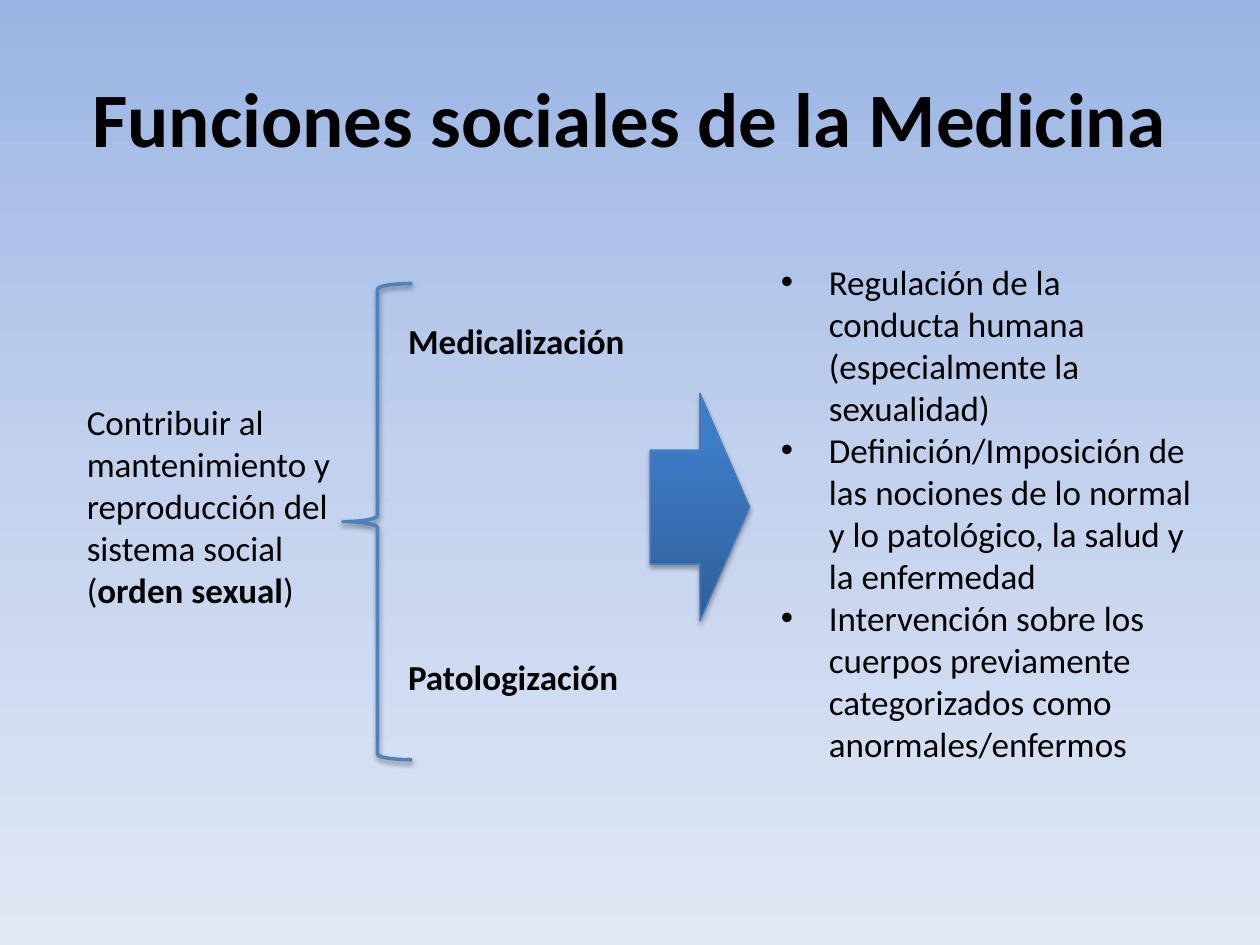
from lxml import etree
from pptx import Presentation
from pptx.dml.color import RGBColor
from pptx.enum import shapes, text
from pptx.oxml import ns
from pptx.util import Inches, Pt

rgb = RGBColor.from_string


def write(p, content, size=20, bold=False, color="000000"):
    r = p.add_run()
    r.text = content
    r.font.name = "Calibri"
    r.font.size = Pt(size)
    r.font.bold = bold
    r.font.color.rgb = rgb(color)


def gradient(fill, parent, stops, angle):
    fill.gradient()
    fill.gradient_angle = angle
    stop_list = parent.find(".//" + ns.qn("a:gsLst"))
    for old in list(stop_list):
        stop_list.remove(old)
    for position, color in stops:
        gs = etree.SubElement(stop_list, ns.qn("a:gs"), pos=str(position * 1000))
        etree.SubElement(gs, ns.qn("a:srgbClr"), val=color)


prs = Presentation()
prs.slide_width, prs.slide_height = Inches(10), Inches(7.5)
s = prs.slides.add_slide(prs.slide_layouts[5])

# Background
gradient(s.background.fill, s.element,
         [(0, "9AB5E4"), (50, "C2D1ED"), (100, "E1E8F5")], 270)

# Title
title = s.shapes.title
title.left, title.top = Inches(0.5), Inches(0.3)
title.width, title.height = Inches(9), Inches(1.25)
title.text_frame.vertical_anchor = text.MSO_ANCHOR.MIDDLE
p = title.text_frame.paragraphs[0]
p.alignment = text.PP_ALIGN.CENTER
write(p, "Funciones sociales de la Medicina", size=44, bold=True)

# Text columns
boxes = [
    (0.59, 3.13, 2.28, 2.12),
    (3.14, 2.49, 1.94, 3.13),
    (6.1, 2.02, 3.46, 4.14),
]
frames = []
for box in boxes:
    tf = s.shapes.add_textbox(*map(Inches, box)).text_frame
    tf.word_wrap = True
    frames.append(tf)
purpose, processes, effects = frames

# Purpose
p = purpose.paragraphs[0]
write(p, "Contribuir al mantenimiento y reproducción del sistema social (")
write(p, "orden sexual", bold=True)
write(p, ")")

# Processes
processes.word_wrap = False
write(processes.paragraphs[0], "Medicalización", bold=True)
p = processes.add_paragraph()
p.space_before = Pt(168)
write(p, "Patologización", bold=True)

# Effects
for i, effect in enumerate([
    "Regulación de la conducta humana (especialmente la sexualidad)",
    "Definición/Imposición de las nociones de lo normal y lo patológico, "
    "la salud y la enfermedad",
    "Intervención sobre los cuerpos previamente categorizados como "
    "anormales/enfermos",
]):
    p = effects.add_paragraph() if i else effects.paragraphs[0]
    write(p, effect)
    pPr = p._p.get_or_add_pPr()
    pPr.set("marL", str(Inches(0.38)))
    pPr.set("indent", str(-Inches(0.38)))
    etree.SubElement(pPr, ns.qn("a:buFont"), typeface="Arial")
    etree.SubElement(pPr, ns.qn("a:buChar"), char="•")

# Arrow and brace
arrow = s.shapes.add_shape(shapes.MSO_SHAPE.RIGHT_ARROW, Inches(5.16),
                           Inches(3.12), Inches(0.79), Inches(1.81))
gradient(arrow.fill, arrow._element.spPr,
         [(0, "2F5F99"), (80, "3D7CC7"), (100, "3A7CCB")], 90)
brace = s.shapes.add_shape(shapes.MSO_SHAPE.LEFT_BRACE, Inches(2.72),
                           Inches(2.25), Inches(0.55), Inches(3.78))
brace.fill.background()

# Outlines and soft shadows
for sp, color, width, opacity, distance in [
    (arrow, "4B7EBC", 0.75, 35, 1.8),
    (brace, "4F81BD", 2, 38, 1.6),
]:
    sp.line.color.rgb = rgb(color)
    sp.line.width = Pt(width)
    sp.shadow.inherit = False
    effect_list = sp._element.spPr.find(ns.qn("a:effectLst"))
    shadow = etree.SubElement(effect_list, ns.qn("a:outerShdw"),
                              blurRad=str(Pt(3.1)), dist=str(Pt(distance)),
                              dir="5400000", rotWithShape="0")
    clr = etree.SubElement(shadow, ns.qn("a:srgbClr"), val="000000")
    etree.SubElement(clr, ns.qn("a:alpha"), val=str(opacity * 1000))

prs.save("out.pptx")
